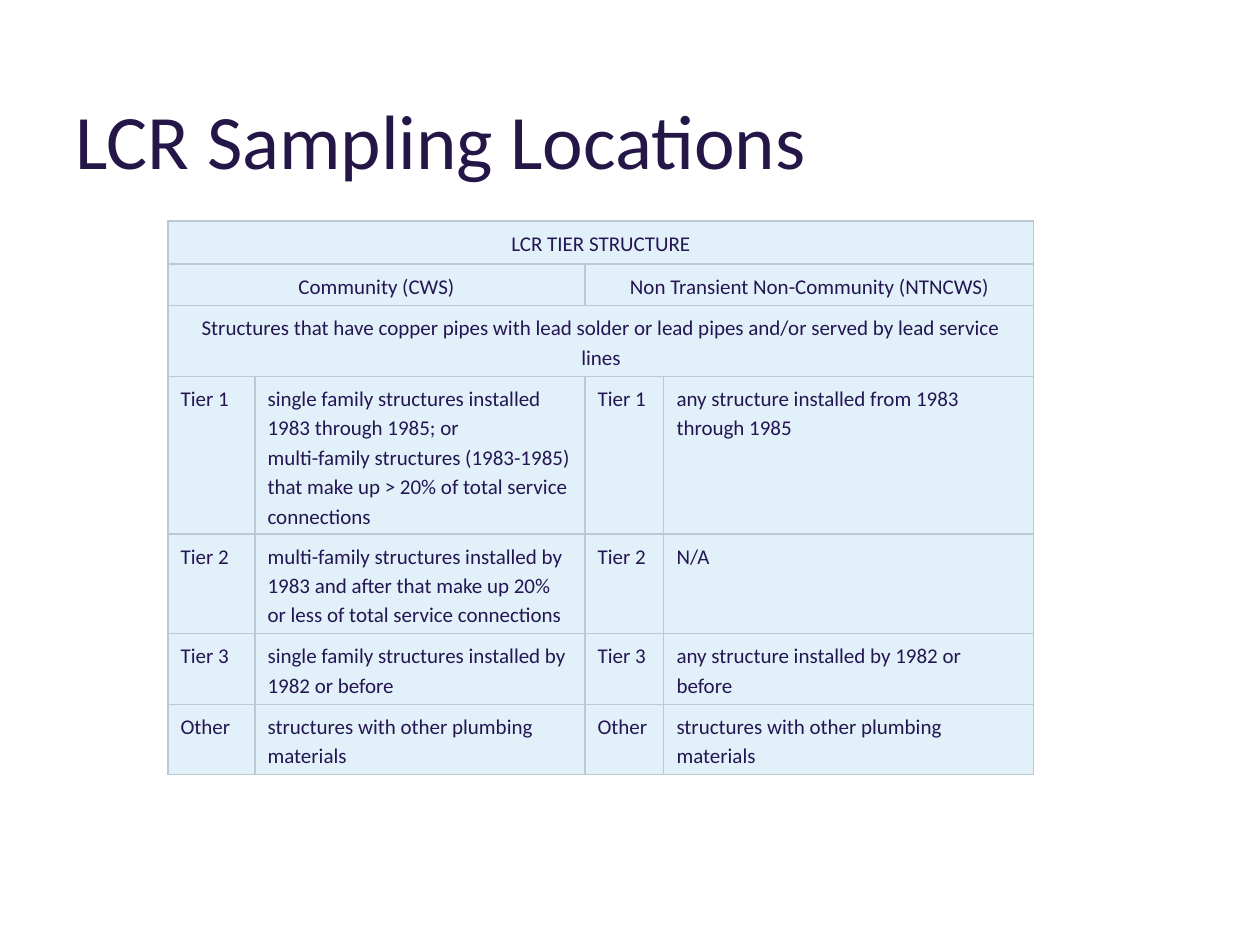
from lxml import etree
from pptx import Presentation
from pptx.dml.color import RGBColor
from pptx.enum.text import MSO_ANCHOR, PP_ALIGN
from pptx.oxml.ns import qn
from pptx.util import Pt

MIDDLE = MSO_ANCHOR.MIDDLE
LEFT, CENTER = PP_ALIGN.LEFT, PP_ALIGN.CENTER
TITLE_INK = RGBColor(0x24, 0x16, 0x47)
TABLE_INK = RGBColor(0x24, 0x16, 0x52)
CELL_FILL = RGBColor(0xE1, 0xF0, 0xF9)
BORDER = RGBColor(0xB9, 0xCA, 0xD5)
FONT = "Calibri"
EMU_PER_PX = 914400 / 126

COLUMN_WIDTHS = [87, 330, 79, 370]
ROW_HEIGHTS = [43, 42, 66, 139, 91, 66, 66]
HEADINGS = [
    ["LCR TIER STRUCTURE"],
    ["Community (CWS)", "Non Transient Non-Community (NTNCWS)"],
    ["Structures that have copper pipes with lead solder or lead pipes "
     "and/or served by lead service lines"],
]
TIERS = [
    ("Tier 1",
     "single family structures installed 1983 through 1985; or\n"
     "multi-family structures (1983-1985) that make up > 20% of total service connections",
     "any structure installed from 1983 through 1985"),
    ("Tier 2",
     "multi-family structures installed by 1983 and after that make up 20% "
     "or less of total service connections",
     "N/A"),
    ("Tier 3",
     "single family structures installed by 1982 or before",
     "any structure installed by 1982 or before"),
    ("Other",
     "structures with other plumbing materials",
     "structures with other plumbing materials"),
]


def px(length):
    return round(length * EMU_PER_PX)


class SlideBuilder:
    """Holds the style and the current slide, and adds its elements."""

    def __init__(self, deck):
        self.page = deck.slides.add_slide(deck.slide_layouts[6])

    def style(self, para, size, color, align=LEFT):
        para.alignment = align
        para.font.name = FONT
        para.font.size = Pt(size)
        para.font.color.rgb = color

    def title(self, text, left, top, width, height):
        box = self.page.shapes.add_textbox(px(left), px(top), px(width), px(height))
        frame = box.text_frame
        frame.word_wrap = True
        frame.vertical_anchor = MIDDLE
        frame.text = text
        self.style(frame.paragraphs[0], 44, TITLE_INK)

    def border(self, cell):
        properties = cell._tc.get_or_add_tcPr()
        for index, side in enumerate(("a:lnL", "a:lnR", "a:lnT", "a:lnB")):
            line = etree.Element(qn(side), w=str(Pt(0.75)))
            fill = etree.SubElement(line, qn("a:solidFill"))
            etree.SubElement(fill, qn("a:srgbClr"), val=str(BORDER))
            properties.insert(index, line)

    def fill_cell(self, cell, text, align):
        cell.text = text
        for para in cell.text_frame.paragraphs:
            self.style(para, 12, TABLE_INK, align)
            para.line_spacing = 1.15

    def table(self, headings, tiers, left, top, widths, heights):
        frame = self.page.shapes.add_table(
            len(heights), len(widths), px(left), px(top), px(sum(widths)), px(sum(heights)))
        table = frame.table
        table.first_row = table.horz_banding = False
        for column, width in zip(table.columns, widths):
            column.width = px(width)
        for row, height in zip(table.rows, heights):
            row.height = px(height)
        for cell in table.iter_cells():
            cell.fill.solid()
            cell.fill.fore_color.rgb = CELL_FILL
            self.border(cell)
        for row, texts in enumerate(headings):
            span = len(widths) // len(texts)
            for index, text in enumerate(texts):
                cell = table.cell(row, index * span)
                cell.merge(table.cell(row, (index + 1) * span - 1))
                self.fill_cell(cell, text, CENTER)
        for row, (tier, community, non_community) in enumerate(tiers, len(headings)):
            for column, text in enumerate((tier, community, tier, non_community)):
                self.fill_cell(table.cell(row, column), text, LEFT)


def main():
    deck = Presentation()
    deck.slide_width, deck.slide_height = px(1260), px(945)
    builder = SlideBuilder(deck)
    builder.title("LCR Sampling Locations", 63, 78, 1134, 122)
    builder.table(HEADINGS, TIERS, 168, 221, COLUMN_WIDTHS, ROW_HEIGHTS)
    deck.save("out.pptx")


if __name__ == "__main__":
    main()
